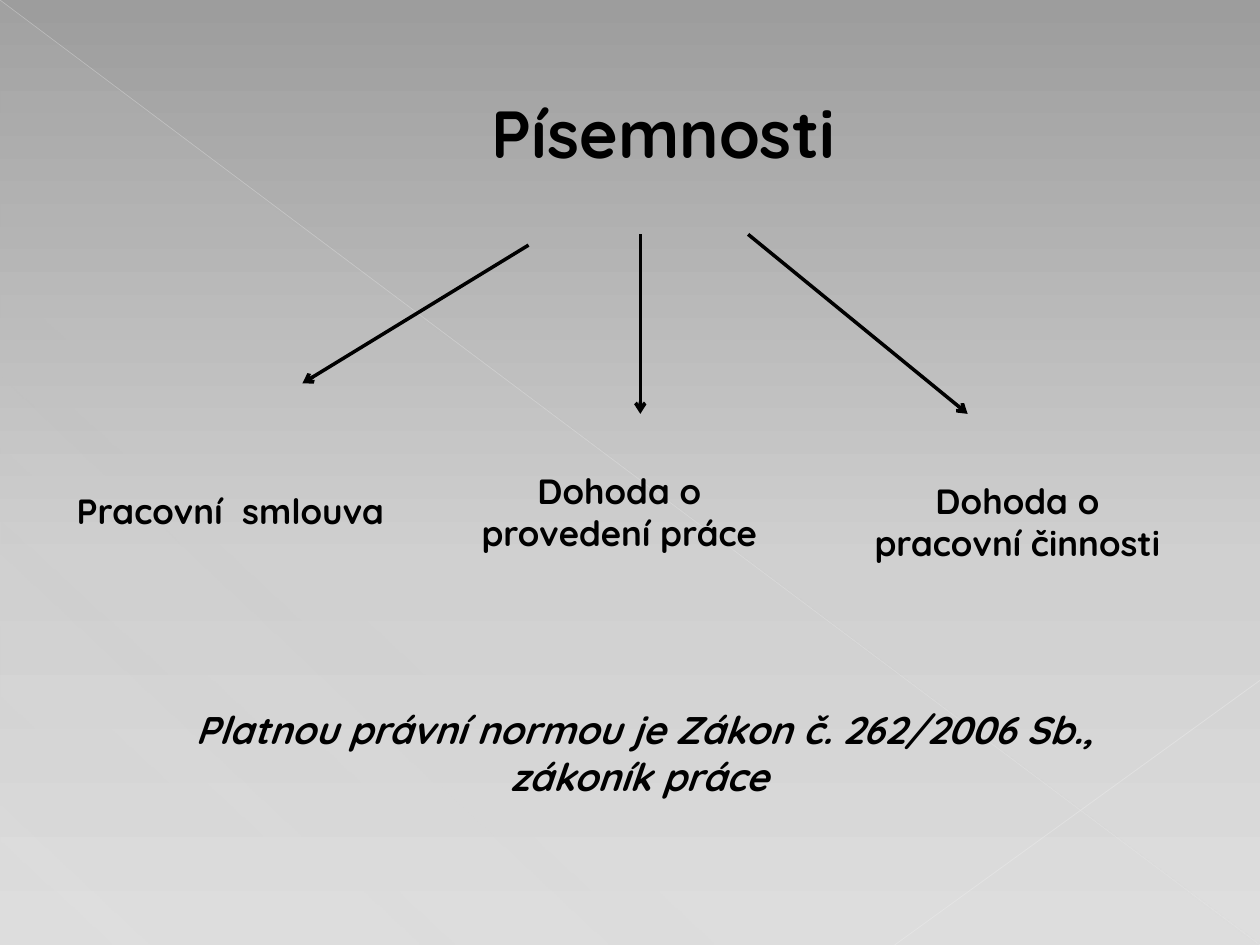
from lxml.etree import SubElement as Sub
from pptx import Presentation
from pptx.dml.color import RGBColor
from pptx.enum.shapes import MSO_CONNECTOR as Conn, MSO_SHAPE as Form
from pptx.enum.text import MSO_ANCHOR as Anchor, PP_ALIGN as Align
from pptx.oxml.ns import qn
from pptx.util import Inches, Pt

WIDE, HIGH = 10, 7.5
FONT = "Quicksand"
BLACK = RGBColor(0, 0, 0)
DARK = RGBColor(0x9D, 0x9D, 0x9D)
MID = RGBColor(0xD0, 0xD0, 0xD0)
PALE = RGBColor(0xDE, 0xDE, 0xDE)
VEIL = RGBColor(0xD2, 0xD2, 0xD2)
RAY = RGBColor(0xEB, 0xEB, 0xEB)
GLOW = RGBColor(0xED, 0xED, 0xED)


def scale(box, x, y, w, h):
    left, top, wide, high = box
    return left + x * wide, top + y * high, w * wide, h * high


def fade(color, share):
    Sub(color, qn("a:alpha"), val=str(share * 1000))


def blend(fill, root, stops, angle):
    fill.gradient()
    grad = root.find(".//" + qn("a:gradFill"))
    grad.find(qn("a:lin")).set("ang", str(angle * 60000))
    items = grad.find(qn("a:gsLst"))
    for item in list(items):
        items.remove(item)
    for place, color, share in stops:
        stop = Sub(items, qn("a:gs"), pos=str(place * 1000))
        tint = Sub(stop, qn("a:srgbClr"), val=str(color))
        if share < 100:
            fade(tint, share)


def add_line(slide, box, start, end, color, width):
    ends = [scale(box, *spot, 0, 0)[:2] for spot in (start, end)]
    line = slide.shapes.add_connector(
        Conn.STRAIGHT, *[Inches(v) for spot in ends for v in spot])
    line.line.color.rgb = color
    line.line.width = Pt(width)
    props = line._element.spPr
    Sub(props, qn("a:effectLst"))
    return props.find(qn("a:ln"))


def add_text(slide, box, text, size, align=Align.CENTER, slant=False):
    shape = slide.shapes.add_textbox(*[Inches(v) for v in box])
    frame = shape.text_frame
    frame.word_wrap = True
    para = frame.paragraphs[0]
    para.text = text
    para.alignment = align
    font = para.font
    font.name, font.size, font.bold = FONT, Pt(size), True
    font.italic = slant
    font.color.rgb = BLACK
    return frame


def draw_back(slide, box):
    blend(slide.background.fill, slide.element,
          [(0, DARK, 100), (60, MID, 100), (100, PALE, 100)], 90)
    veil = slide.shapes.add_shape(
        Form.RIGHT_TRIANGLE, *[Inches(v) for v in box])
    veil.shadow.inherit = False
    veil.line.fill.background()
    blend(veil.fill, veil._element,
          [(0, VEIL, 10), (70, VEIL, 8), (100, VEIL, 1)], 133)
    rays = [((0, 0), (1, 1), RAY, 0.39, 35),
            ((1, 0.72), (0.71, 1), GLOW, 0.47, 45)]
    for start, end, color, width, share in rays:
        line = add_line(slide, box, start, end, color, width)
        fade(line.find(".//" + qn("a:srgbClr")), share)


def draw_title(slide, box):
    frame = add_text(slide, box, "Písemnosti", 38)
    frame.vertical_anchor = Anchor.MIDDLE
    frame.margin_left = Inches(0.63)


def draw_arrows(slide, box):
    routes = [((0.34, 0.06), (0, 0.83)),
              ((1.0 - 0.33, 0), (1, 1)),
              ((0.508, 0), (0.508, 1))]
    for start, end in routes:
        line = add_line(slide, box, start, end, BLACK, 2)
        Sub(line, qn("a:tailEnd"), type="arrow")


def draw_kinds(slide, box):
    kinds = [("Pracovní  smlouva", 0, 0.19, 0.32, 0.52, Align.LEFT),
             ("Dohoda o provedení práce", 0.336, 0, 0.318, 0.9, Align.CENTER),
             ("Dohoda o pracovní činnosti", 0.7, 0.1, 0.3, 0.9, Align.CENTER)]
    for text, x, y, w, h, align in kinds:
        add_text(slide, scale(box, x, y, w, h), text, 20, align)


def draw_law(slide, box):
    text = "Platnou právní normou je Zákon č. 262/2006 Sb., zákoník práce "
    add_text(slide, box, text, 22, slant=True)


def main():
    deck = Presentation()
    deck.slide_width, deck.slide_height = Inches(WIDE), Inches(HIGH)
    slide = deck.slides.add_slide(deck.slide_layouts[6])
    page = (0, 0, WIDE, HIGH)
    draw_back(slide, page)
    draw_title(slide, scale(page, 0.05, 0.04, 0.9, 0.2))
    draw_arrows(slide, scale(page, 0.24, 0.248, 0.528, 0.19))
    draw_kinds(slide, scale(page, 0.051, 0.49, 0.89, 0.113))
    draw_law(slide, scale(page, 0.098, 0.741, 0.827, 0.112))
    deck.save("out.pptx")


if __name__ == "__main__":
    main()
